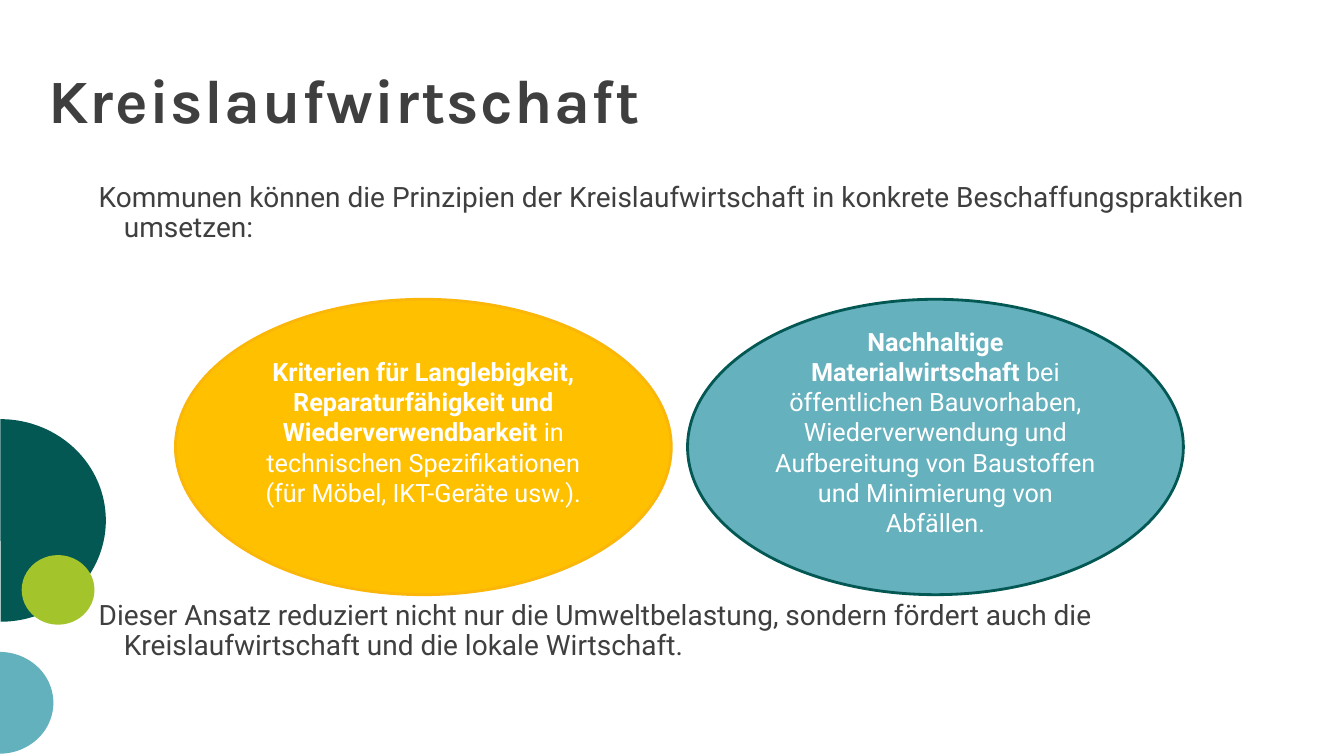
import pptx
import pptx.dml.color
import pptx.enum.shapes
import pptx.enum.text
import pptx.util

Pt = pptx.util.Pt
RGBColor = pptx.dml.color.RGBColor
MSO_SHAPE = pptx.enum.shapes.MSO_SHAPE
PP_ALIGN = pptx.enum.text.PP_ALIGN
MSO_ANCHOR = pptx.enum.text.MSO_ANCHOR

GREY = RGBColor(0x3F, 0x3F, 0x3F)
WHITE = RGBColor(0xFF, 0xFF, 0xFF)
DARK_GREEN = RGBColor(0x03, 0x58, 0x54)
LIME = RGBColor(0xA3, 0xC4, 0x2A)
SKY = RGBColor(0x64, 0xB1, 0xBE)
TEAL = RGBColor(0x65, 0xB1, 0xBE)
YELLOW = RGBColor(0xFF, 0xC0, 0x00)
AMBER = RGBColor(0xFA, 0xB6, 0x09)

TITLE = dict(name="Karla", size=Pt(44), bold=True)
BODY = dict(name="Roboto", size=Pt(20), bold=False)
LABEL = dict(name="Roboto", size=Pt(18), bold=False)
LABEL_BOLD = dict(LABEL, bold=True)


def set_attributes(target, values):
    for name, value in values.items():
        setattr(target, name, value)


def set_frame(frame, anchor, left=0, top=0, right=0, bottom=0):
    set_attributes(frame, dict(
        word_wrap=True, vertical_anchor=anchor,
        margin_left=Pt(left), margin_top=Pt(top),
        margin_right=Pt(right), margin_bottom=Pt(bottom)))


def add_run(paragraph, text, font_format, color):
    run = paragraph.add_run()
    run.text = text
    set_attributes(run.font, font_format)
    run.font.color.rgb = color
    return run


def add_filled_shape(slide, kind, box, fill, line=None):
    shape = slide.shapes.add_shape(kind, *map(Pt, box))
    shape.shadow.inherit = False
    shape.fill.solid()
    shape.fill.fore_color.rgb = fill
    if line is None:
        shape.line.fill.background()
    else:
        shape.line.color.rgb = line
        shape.line.width = Pt(2)
    return shape


def add_edge_circles(slide, left, top):
    """Two half circles on the slide edge, with a small circle between them."""
    half_circles = [((-72, 0, 144.7, 150.5), DARK_GREEN, 107.96),
                    ((-36.7, 167, 72.7, 77), SKY, 108.52)]
    for (x, y, width, height), color, end_angle in half_circles:
        box = (left + x, top + y, width, height)
        shape = add_filled_shape(slide, MSO_SHAPE.PIE, box, color)
        shape.adjustments[0] = 0
        shape.adjustments[1] = end_angle
        shape.rotation = 270
    # The small circle is turned like the halves, so its frame is wide.
    add_filled_shape(slide, MSO_SHAPE.OVAL,
                     (left + 15.5, top + 100, 52, 49.7), LIME)


def add_title(slide, box, text):
    frame = slide.shapes.add_textbox(*map(Pt, box)).text_frame
    set_frame(frame, MSO_ANCHOR.BOTTOM)
    paragraph = frame.paragraphs[0]
    paragraph.line_spacing = 0.8
    run = add_run(paragraph, text, TITLE, GREY)
    run.font._element.set("spc", "100")


def add_body_text(slide, box, text):
    frame = slide.shapes.add_textbox(*map(Pt, box)).text_frame
    set_frame(frame, MSO_ANCHOR.TOP)
    paragraph = frame.paragraphs[0]
    paragraph.line_spacing = 0.9
    properties = paragraph._p.get_or_add_pPr()
    properties.set("marL", str(Pt(36)))
    properties.set("indent", str(Pt(-18)))
    add_run(paragraph, text, BODY, GREY)


def add_ellipses(slide, box, gap, ellipses):
    """Ellipses of equal width side by side in the box."""
    left, top, width, height = box
    ellipse_width = (width - gap * (len(ellipses) - 1)) / len(ellipses)
    for index, (fill, line, bold_text, text) in enumerate(ellipses):
        x = left + index * (ellipse_width + gap)
        shape = add_filled_shape(slide, MSO_SHAPE.OVAL,
                                 (x, top, ellipse_width, height), fill, line)
        # The deep bottom margin lifts the text by half a line.
        set_frame(shape.text_frame, MSO_ANCHOR.MIDDLE, 7.2, 3.6, 7.2, 25.2)
        paragraph = shape.text_frame.paragraphs[0]
        paragraph.alignment = PP_ALIGN.CENTER
        add_run(paragraph, bold_text, LABEL_BOLD, WHITE)
        add_run(paragraph, text, LABEL, WHITE)


def main():
    presentation = pptx.Presentation()
    presentation.slide_width = Pt(960)
    presentation.slide_height = Pt(540)
    slide = presentation.slides.add_slide(presentation.slide_layouts[6])

    add_edge_circles(slide, 0, 296.5)
    add_title(slide, (34.5, 0, 891.5, 96.5), "Kreislaufwirtschaft")
    add_body_text(slide, (52.5, 131, 850.5, 46),
                  "Kommunen können die Prinzipien der Kreislaufwirtschaft in "
                  "konkrete Beschaffungspraktiken umsetzen:")
    add_body_text(slide, (52.5, 429.5, 850.5, 46),
                  "Dieser Ansatz reduziert nicht nur die Umweltbelastung, sondern "
                  "fördert auch die Kreislaufwirtschaft und die lokale Wirtschaft.")
    add_ellipses(slide, (125.3, 213.8, 720, 211), 11.6, [
        (YELLOW, AMBER,
         "Kriterien für Langlebigkeit, Reparaturfähigkeit und "
         "Wiederverwendbarkeit ",
         "in technischen Spezifikationen (für Möbel, IKT-Geräte usw.)."),
        (TEAL, DARK_GREEN,
         "Nachhaltige Materialwirtschaft ",
         "bei öffentlichen Bauvorhaben, Wiederverwendung und Aufbereitung "
         "von Baustoffen und Minimierung von Abfällen."),
    ])
    presentation.save("out.pptx")


if __name__ == "__main__":
    main()
